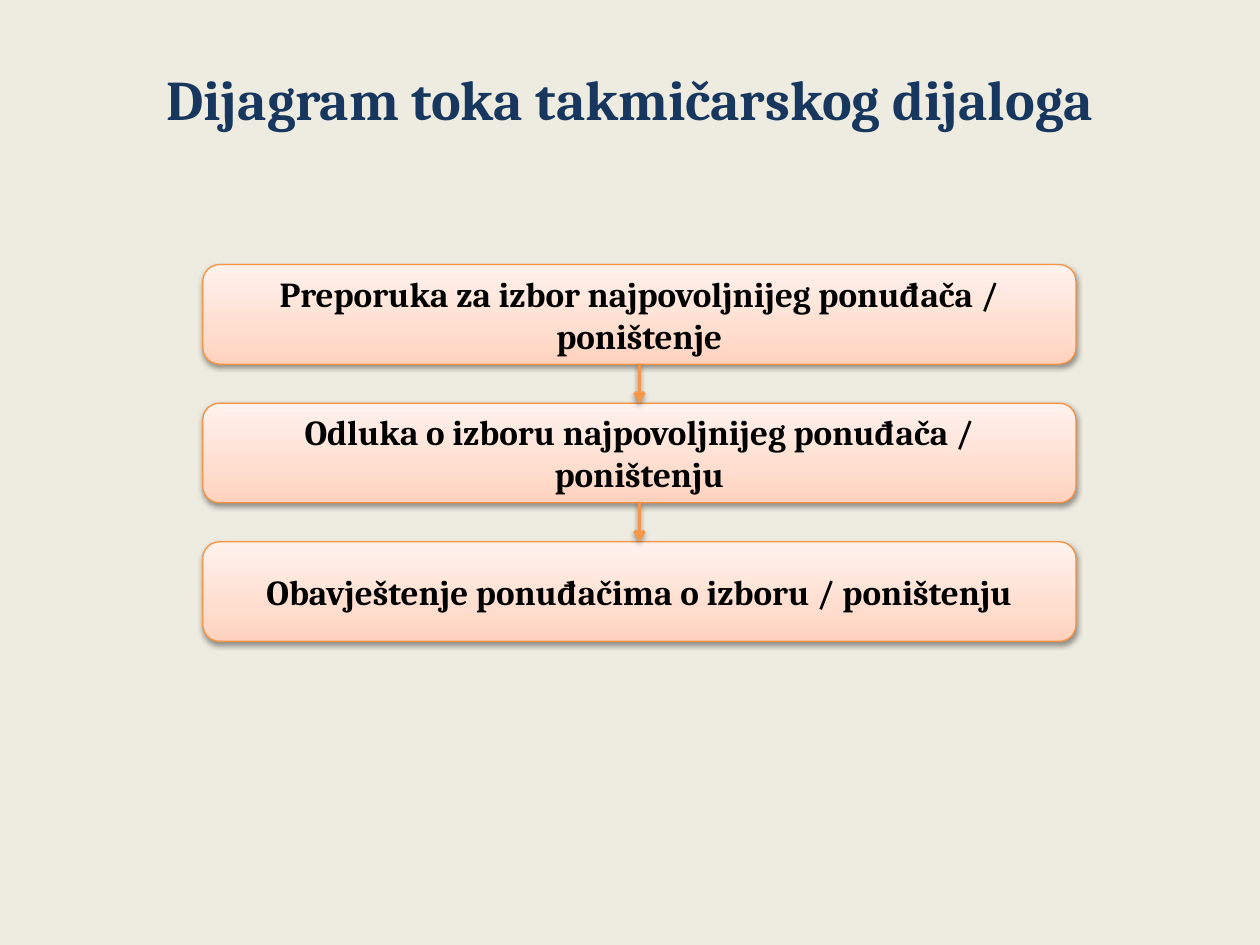
from copy import deepcopy

from pptx import Presentation
from pptx.dml.color import RGBColor
from pptx.enum.shapes import MSO_CONNECTOR, MSO_SHAPE
from pptx.enum.text import MSO_ANCHOR, PP_ALIGN
from pptx.oxml import parse_xml
from pptx.oxml.ns import nsdecls, qn
from pptx.util import Inches, Pt

COLORS = {
    "background": "EEECE1",
    "title": "17375E",
    "text": "000000",
    "outline": "F69240",
    "arrow": "F79646",
    "shadow": "000000",
}
STEP_GRADIENT = [(0, "FFD2BD"), (0.35, "FFDED0"), (1, "FFF2ED")]
STEPS = [
    "Preporuka za izbor najpovoljnijeg ponuđača / poništenje",
    "Odluka o izboru najpovoljnijeg ponuđača / poništenju",
    "Obavještenje ponuđačima o izboru / poništenju",
]
# Flow grid, in inches
LEFT, TOP, WIDTH, HEIGHT, PITCH = 1.61, 2.1, 6.93, 0.79, 1.1


def write_text(box, text, size, color):
    frame = box.text_frame
    frame.word_wrap = True
    frame.vertical_anchor = MSO_ANCHOR.MIDDLE
    para = frame.paragraphs[0]
    para.text = text
    para.alignment = PP_ALIGN.CENTER
    para.font.name = "Cambria"
    para.font.size = Pt(size)
    para.font.bold = True
    para.font.color.rgb = RGBColor.from_string(COLORS[color])


def add_shadow(shape):
    shape.element.spPr.append(parse_xml(
        f'<a:effectLst {nsdecls("a")}>'
        f'<a:outerShdw blurRad="{Pt(3.1)}" dist="{Pt(1.6)}" dir="5400000" rotWithShape="0">'
        f'<a:srgbClr val="{COLORS["shadow"]}"><a:alpha val="38000"/></a:srgbClr>'
        '</a:outerShdw></a:effectLst>'))


deck = Presentation()
deck.slide_width, deck.slide_height = Inches(10), Inches(7.5)
page = deck.slides.add_slide(deck.slide_layouts[6])
page.background.fill.solid()
page.background.fill.fore_color.rgb = RGBColor.from_string(COLORS["background"])

# Title
title = page.shapes.add_textbox(Inches(0.5), Inches(0.3), Inches(9), Inches(0.96))
write_text(title, "Dijagram toka takmičarskog dijaloga", 32, "title")

# Steps
for row, text in enumerate(STEPS):
    step = page.shapes.add_shape(
        MSO_SHAPE.ROUNDED_RECTANGLE,
        Inches(LEFT), Inches(TOP + row * PITCH), Inches(WIDTH), Inches(HEIGHT))
    step.fill.gradient()
    step.fill.gradient_angle = 90
    stop_list = step.element.spPr.find(".//" + qn("a:gsLst"))
    stop_list.insert(1, deepcopy(stop_list[0]))
    for stop, (position, color) in zip(step.fill.gradient_stops, STEP_GRADIENT):
        stop.position = position
        stop.color.rgb = RGBColor.from_string(color)
    step.line.color.rgb = RGBColor.from_string(COLORS["outline"])
    step.line.width = Pt(0.75)
    add_shadow(step)
    write_text(step, text, 20, "text")

# Arrows between consecutive steps
center = Inches(LEFT + WIDTH / 2)
for row in range(len(STEPS) - 1):
    start = TOP + row * PITCH + HEIGHT
    arrow = page.shapes.add_connector(
        MSO_CONNECTOR.STRAIGHT,
        center, Inches(start), center, Inches(start + PITCH - HEIGHT))
    arrow.line.color.rgb = RGBColor.from_string(COLORS["arrow"])
    arrow.line.width = Pt(2)
    arrow.element.spPr.find(qn("a:ln")).append(
        parse_xml(f'<a:tailEnd {nsdecls("a")} type="arrow"/>'))
    add_shadow(arrow)

deck.save("out.pptx")
